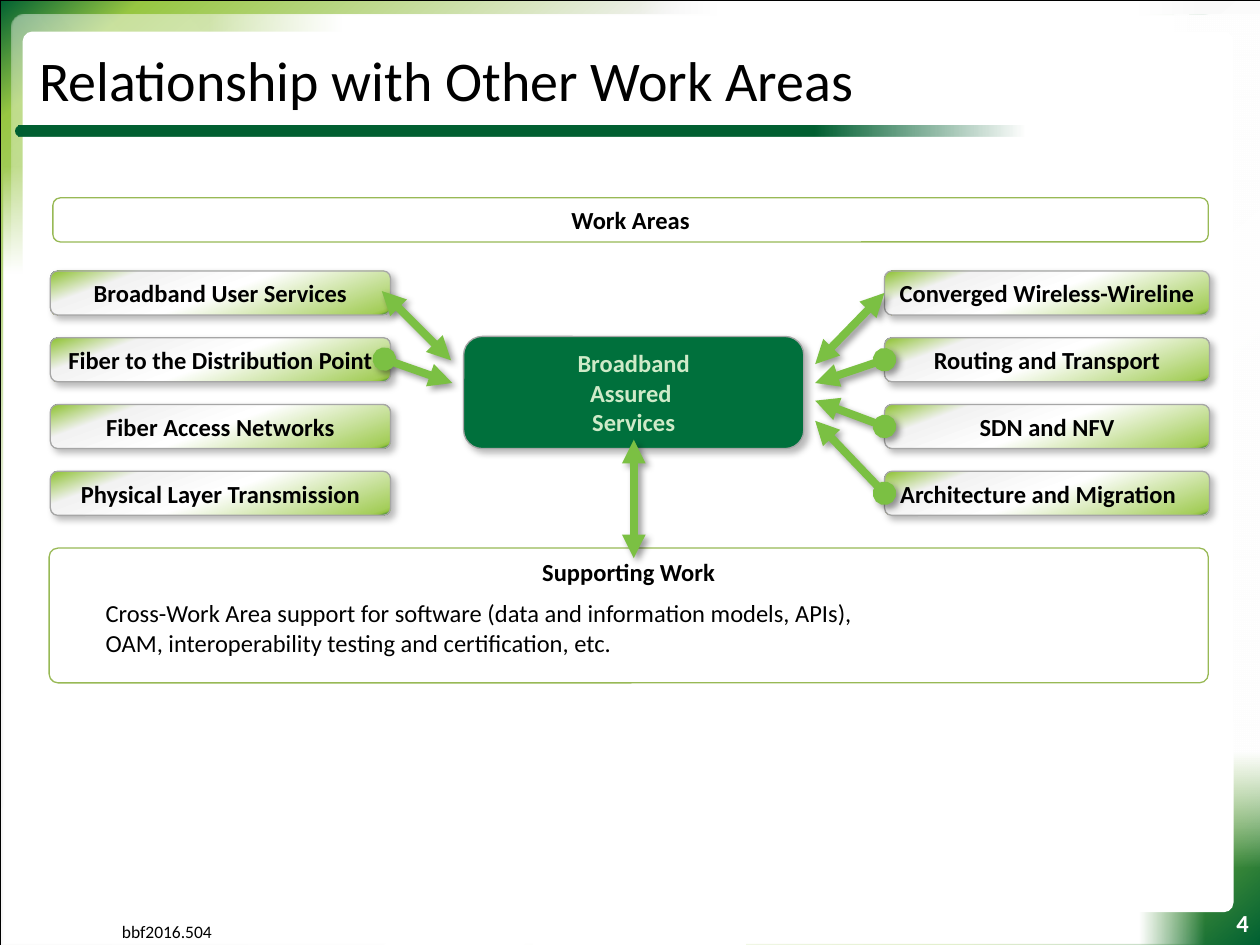
import pptx
import pptx.dml.color
import pptx.enum.shapes
import pptx.enum.text
import pptx.oxml
import pptx.oxml.ns
import pptx.util

Inches = pptx.util.Inches
Shapes = pptx.enum.shapes.MSO_SHAPE
Align = pptx.enum.text.PP_ALIGN
Anchor = pptx.enum.text.MSO_ANCHOR
qn = pptx.oxml.ns.qn

# Gradient stops are (position %, colour, opacity %)
FRAME_STOPS = [(0, "006032", 100), (6, "97C642", 100), (29, "F2F2F2", 100),
               (69, "FFFFFF", 100), (87, "97C642", 100), (100, "006032", 100)]
VEIL_STOPS = [(0, "006032", 48), (6, "97C642", 52), (34, "F2F2F2", 50),
              (62, "FFFFFF", 48), (91, "97C642", 51), (100, "006032", 52)]
AREA_STOPS = [(0, "006032", 100), (2, "97C642", 100), (20, "F2F2F2", 100),
              (50, "FFFFFF", 100), (95, "A5CE5B", 100), (97, "97C642", 100),
              (100, "006032", 100)]
BAR_STOPS = [(0, "006032", 100), (79, "006032", 100), (100, "006032", 0)]
FADE_IN = [(5, "FFFFFF", 0), (18, "FFFFFF", 100), (89, "FFFFFF", 100)]
FADE_BOTH = FADE_IN + [(100, "FFFFFF", 0)]


def rgb(hex_colour):
    return pptx.dml.color.RGBColor.from_string(hex_colour)


def drawing_xml(markup):
    """Parse one DrawingML element, adding the namespace to its root tag."""
    tag, rest = markup.split(" ", 1)
    return pptx.oxml.parse_xml(f"{tag} {pptx.oxml.ns.nsdecls('a')} {rest}")


class SlideBuilder:
    font = "Calibri"
    arrow_colour = "7BC043"

    def __init__(self, slide):
        self.slide = slide

    def text(self, shape, wording, size=14, colour="000000", bold=False,
             align=Align.LEFT, anchor=Anchor.TOP, insets=(0.1, 0.05, 0.1, 0.05), wrap=True):
        frame = shape.text_frame
        frame.text = wording
        frame.word_wrap = wrap
        frame.vertical_anchor = anchor
        (frame.margin_left, frame.margin_top,
         frame.margin_right, frame.margin_bottom) = map(Inches, insets)
        for paragraph in frame.paragraphs:
            paragraph.alignment = align
            for run in paragraph.runs:
                run.font.name = self.font
                run.font.size = pptx.util.Pt(size)
                run.font.bold = bold
                run.font.color.rgb = rgb(colour)

    def label(self, wording, box, **style):
        holder = self.slide.shapes.add_textbox(*map(Inches, box))
        self.text(holder, wording, **style)

    def shape(self, preset, box, fill=None, line=None, line_width=0.75, corner=None, shadow=False):
        shape = self.slide.shapes.add_shape(preset, *map(Inches, box))
        shape.shadow.inherit = False
        if corner is not None:
            shape.adjustments[0] = corner
        if fill:
            shape.fill.solid()
            shape.fill.fore_color.rgb = rgb(fill)
        else:
            shape.fill.background()
        if line:
            shape.line.color.rgb = rgb(line)
            shape.line.width = pptx.util.Pt(line_width)
        else:
            shape.line.fill.background()
        if shadow:
            self.cast_shadow(shape, 28)
        return shape

    def gradient(self, shape, stops, angle):
        """Fill with a linear gradient; the angle runs clockwise in degrees."""
        marks = "".join(
            f'<a:gs pos="{position * 1000}"><a:srgbClr val="{colour}">'
            f'<a:alpha val="{opacity * 1000}"/></a:srgbClr></a:gs>'
            for position, colour, opacity in stops)
        properties = shape.element.spPr
        properties.replace(properties.find(qn("a:noFill")), drawing_xml(
            f'<a:gradFill rotWithShape="1"><a:gsLst>{marks}</a:gsLst>'
            f'<a:lin ang="{angle * 60000}" scaled="0"/></a:gradFill>'))

    def cast_shadow(self, shape, opacity):
        shape.element.spPr.find(qn("a:effectLst")).append(drawing_xml(
            '<a:outerShdw blurRad="50800" dist="38100" dir="2700000" algn="tl" '
            'rotWithShape="0"><a:srgbClr val="000000">'
            f'<a:alpha val="{opacity * 1000}"/></a:srgbClr></a:outerShdw>'))

    def work_area(self, wording, box, insets=(0.1, 0.05, 0.1, 0.05)):
        area = self.shape(Shapes.ROUNDED_RECTANGLE, box, line="A6A6A6", shadow=True)
        self.gradient(area, AREA_STOPS, 70)
        self.text(area, wording, bold=True, align=Align.CENTER,
                  anchor=Anchor.MIDDLE, insets=insets)
        return area

    def outlined_panel(self, wording, box, anchor, corner=None):
        panel = self.shape(Shapes.ROUNDED_RECTANGLE, box, line="98B955", corner=corner)
        self.text(panel, wording, bold=True, align=Align.CENTER, anchor=anchor,
                  insets=(0, 0.05, 0, 0.05))

    def arrow(self, start, end, head, area=None):
        """Draw an arrow; with an area, it starts at the middle of its left side."""
        arrow = self.slide.shapes.add_connector(
            pptx.enum.shapes.MSO_CONNECTOR.STRAIGHT, *map(Inches, start + end))
        if area is not None:
            arrow.begin_connect(area, 1)
        arrow.line.color.rgb = rgb(self.arrow_colour)
        arrow.line.width = pptx.util.Pt(4.5)
        properties = arrow.element.spPr
        outline = properties.find(qn("a:ln"))
        outline.append(drawing_xml(f'<a:headEnd type="{head}"/>'))
        outline.append(drawing_xml('<a:tailEnd type="triangle"/>'))
        properties.append(drawing_xml("<a:effectLst />"))
        self.cast_shadow(arrow, 40)


def draw_backdrop(builder):
    frame = builder.shape(Shapes.RECTANGLE, (0, 0, 10, 7.5), line="000000", line_width=0.25)
    builder.gradient(frame, FRAME_STOPS, 50)
    veil = builder.shape(Shapes.ROUNDED_RECTANGLE, (0.09, 0.12, 9.56, 6.44), corner=0.017)
    builder.gradient(veil, VEIL_STOPS, 140)
    for box, stops, angle in [
        ((1.25, 0.12, 8.18, 6.88), FADE_IN, 0),
        ((0.03, 1, 4.91, 6.5), FADE_IN, 90),
        ((4.83, 0.01, 4.73, 7.49), FADE_BOTH, 0),
        ((9.32, 0.12, 0.69, 7.12), FADE_IN, 270),
    ]:
        builder.gradient(builder.shape(Shapes.RECTANGLE, box), stops, angle)
    builder.label("4", (9.57, 7.16, 0.44, 0.34), colour="FFFFFF", bold=True,
                  align=Align.RIGHT, wrap=False)
    builder.shape(Shapes.ROUNDED_RECTANGLE, (0.18, 0.25, 9.61, 6.99), fill="FFFFFF", corner=0.011)
    builder.shape(Shapes.RECTANGLE, (4.23, 6.92, 1.69, 0.58), fill="FFFFFF")
    builder.label("bbf2016.504", (0.87, 7.26, 0.93, 0.27), size=10, wrap=False)
    builder.shape(Shapes.OVAL, (0.12, 1, 0.06, 0.08), fill="006032")
    title_bar = builder.shape(Shapes.RECTANGLE, (0.15, 1, 7.98, 0.08))
    builder.gradient(title_bar, BAR_STOPS, 0)


def draw_relationships(builder):
    hub = builder.shape(Shapes.ROUNDED_RECTANGLE, (3.68, 2.67, 2.7, 0.89),
                        fill="00703C", line="A6A6A6", shadow=True)
    builder.text(hub, "Broadband\vAssured \vServices", colour="CFEAC8", bold=True,
                 align=Align.CENTER, anchor=Anchor.MIDDLE, insets=(0.01, 0, 0.01, 0))
    builder.label("Cross-Work Area support for software (data and information models, APIs), \v"
                  "OAM, interoperability testing and certification, etc.",
                  (0.74, 4.7, 8.67, 0.57))

    first_top, pitch, height = 2.15, 0.53, 0.35
    for row, wording in enumerate(["Broadband User Services", "Fiber to the Distribution Point",
                                   "Fiber Access Networks", "Physical Layer Transmission"]):
        builder.work_area(wording, (0.4, first_top + row * pitch, 2.7, height))

    right_areas = [
        ("Converged Wireless-Wireline", 0.1, 2.89, "triangle"),
        ("Routing and Transport", 0.1, 3.04, "oval"),
        ("SDN and NFV", 0.1, 3.18, "oval"),
        ("Architecture and Migration", 0.24, 3.34, "oval"),
    ]
    right_links = []
    for row, (wording, right_inset, hub_y, head) in enumerate(right_areas):
        top = first_top + row * pitch
        area = builder.work_area(wording, (7.02, top, 2.58, height),
                                 insets=(0.1, 0.05, right_inset, 0.05))
        right_links.append(((7.02, top + height / 2), (6.47, hub_y), head, area))

    builder.outlined_panel("Work Areas", (0.42, 1.57, 9.17, 0.35), Anchor.MIDDLE)
    builder.outlined_panel("Supporting Work", (0.39, 4.35, 9.2, 1.07), Anchor.TOP, corner=0.066)

    builder.arrow((3.03, 2.31), (3.58, 2.86), "triangle")
    builder.arrow((3.05, 2.85), (3.59, 3.04), "oval")
    for link in right_links:
        builder.arrow(*link)
    builder.arrow((5.03, 3.49), (5.03, 4.43), "triangle")


def main():
    deck = pptx.Presentation()
    deck.slide_width, deck.slide_height = Inches(10), Inches(7.5)
    builder = SlideBuilder(deck.slides.add_slide(deck.slide_layouts[6]))
    draw_backdrop(builder)
    builder.label("Relationship with Other Work Areas", (0.18, 0.25, 9.48, 0.76), size=32,
                  anchor=Anchor.MIDDLE, insets=(0.13, 0.07, 0.13, 0.07))
    draw_relationships(builder)
    deck.save("out.pptx")


if __name__ == "__main__":
    main()
